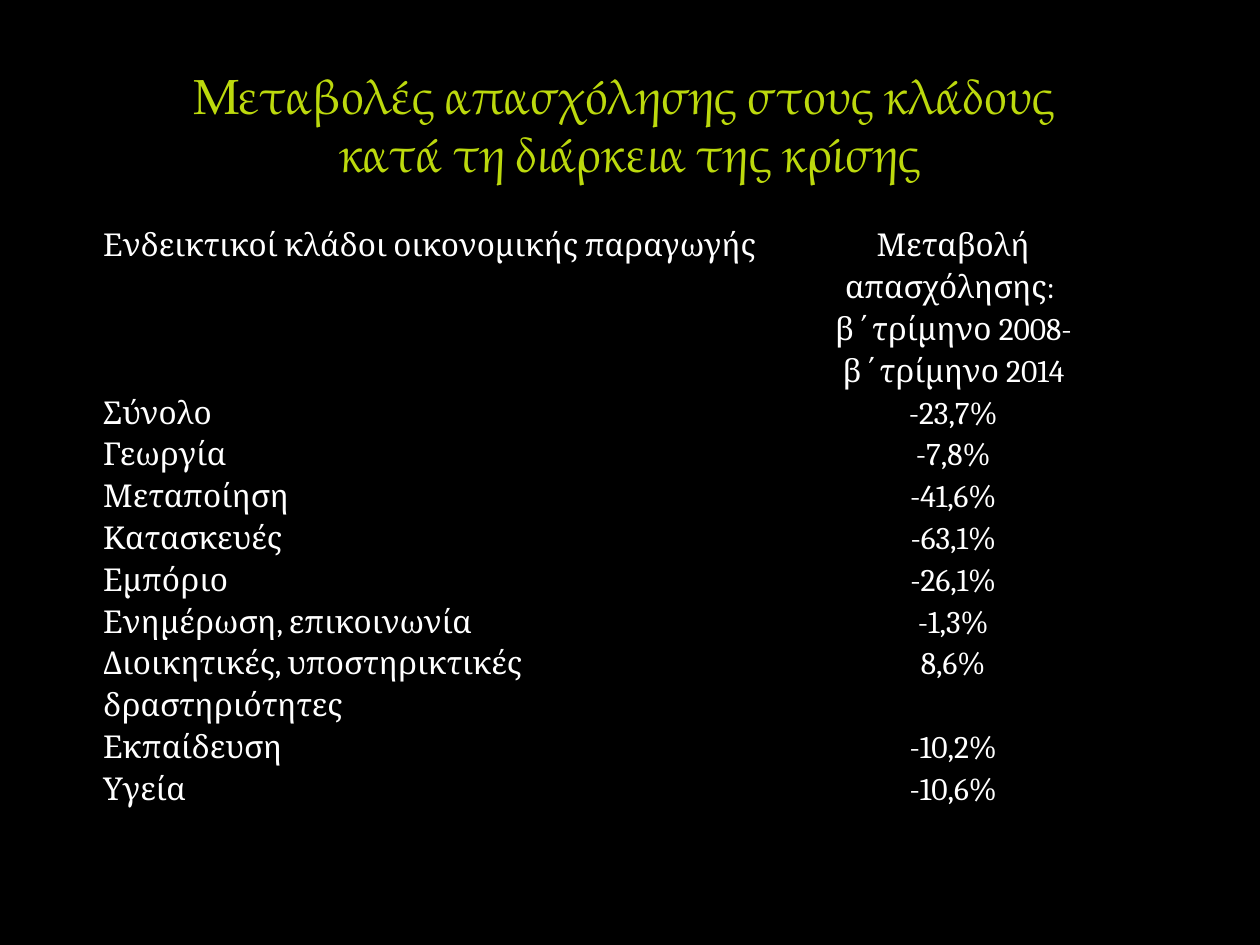
import dataclasses

import pptx
import pptx.dml.color
import pptx.enum.text
import pptx.oxml
import pptx.oxml.ns
import pptx.util

Pt = pptx.util.Pt
Align = pptx.enum.text.PP_ALIGN


@dataclasses.dataclass(frozen=True)
class Theme:
    background: str = "000000"
    title_color: str = "BCD90D"
    body_color: str = "FFFFFF"
    title_font: str = "TeX Gyre Pagella"
    body_font: str = "Cambria"
    title_size: int = 28
    body_size: int = 18


class SlideBuilder:
    def __init__(self, slide, theme):
        self.slide = slide
        self.theme = theme

    def color(self, value):
        return pptx.dml.color.RGBColor.from_string(value)

    def background(self):
        fill = self.slide.background.fill
        fill.solid()
        fill.fore_color.rgb = self.color(self.theme.background)

    def format_runs(self, paragraph, name, size, color):
        for run in paragraph.runs:
            run.font.name = name
            run.font.size = Pt(size)
            run.font.color.rgb = self.color(color)

    def title(self, text, left, top, width, height):
        shape = self.slide.shapes.add_textbox(Pt(left), Pt(top), Pt(width), Pt(height))
        text_frame = shape.text_frame
        text_frame.word_wrap = True
        text_frame.vertical_anchor = pptx.enum.text.MSO_ANCHOR.BOTTOM
        paragraph = text_frame.paragraphs[0]
        paragraph.text = text
        paragraph.alignment = Align.CENTER
        theme = self.theme
        self.format_runs(paragraph, theme.title_font, theme.title_size, theme.title_color)
        for run in paragraph.runs:
            run.font._element.set("spc", "-100")

    def borders(self, cell):
        properties = cell._tc.get_or_add_tcPr()
        for index, side in enumerate(("lnL", "lnR", "lnT", "lnB")):
            line = pptx.oxml.parse_xml(
                f'<a:{side} {pptx.oxml.ns.nsdecls("a")} w="{Pt(1)}"><a:solidFill>'
                f'<a:srgbClr val="{self.theme.background}"/></a:solidFill></a:{side}>'
            )
            properties.insert(index, line)

    def cell(self, cell, text, alignment):
        cell.fill.background()
        self.borders(cell)
        cell.margin_left = cell.margin_right = Pt(5)
        cell.margin_top = cell.margin_bottom = Pt(0)
        cell.text_frame.text = text
        theme = self.theme
        for paragraph in cell.text_frame.paragraphs:
            paragraph.alignment = alignment
            paragraph.line_spacing = 1.15
            self.format_runs(paragraph, theme.body_font, theme.body_size, theme.body_color)

    def table(self, rows, line_counts, left, top, column_widths, line_height):
        shape = self.slide.shapes.add_table(
            len(rows), len(column_widths), Pt(left), Pt(top),
            Pt(sum(column_widths)), Pt(line_height * sum(line_counts)),
        )
        table = shape.table
        table.first_row = table.horz_banding = False
        for column, width in zip(table.columns, column_widths):
            column.width = Pt(width)
        for row, values, count in zip(table.rows, rows, line_counts):
            row.height = Pt(line_height * count)
            for cell, text, alignment in zip(row.cells, values, (Align.LEFT, Align.CENTER)):
                self.cell(cell, text, alignment)


def main():
    presentation = pptx.Presentation()
    presentation.slide_width = Pt(720)
    presentation.slide_height = Pt(540)
    slide = presentation.slides.add_slide(presentation.slide_layouts[6])
    builder = SlideBuilder(slide, Theme())
    builder.background()
    employment_changes = [
        ("Ενδεικτικοί κλάδοι οικονομικής παραγωγής",
         "Μεταβολή απασχόλησης: \nβ΄τρίμηνο 2008-β΄τρίμηνο 2014"),
        ("Σύνολο", "-23,7%"),
        ("Γεωργία", "-7,8%"),
        ("Μεταποίηση", "-41,6%"),
        ("Κατασκευές", "-63,1%"),
        ("Εμπόριο", "-26,1%"),
        ("Ενημέρωση, επικοινωνία", "-1,3%"),
        ("Διοικητικές, υποστηρικτικές δραστηριότητες", "8,6%"),
        ("Εκπαίδευση", "-10,2%"),
        ("Υγεία", "-10,6%"),
    ]
    line_counts = [4, 1, 1, 1, 1, 1, 1, 2, 1, 1]
    builder.table(employment_changes, line_counts, 54, 127.5, (386, 209.5), 21.3)
    builder.title("Μεταβολές απασχόλησης στους κλάδους \vκατά τη διάρκεια της κρίσης",
                  36, 12, 648, 96)
    presentation.save("out.pptx")


if __name__ == "__main__":
    main()
